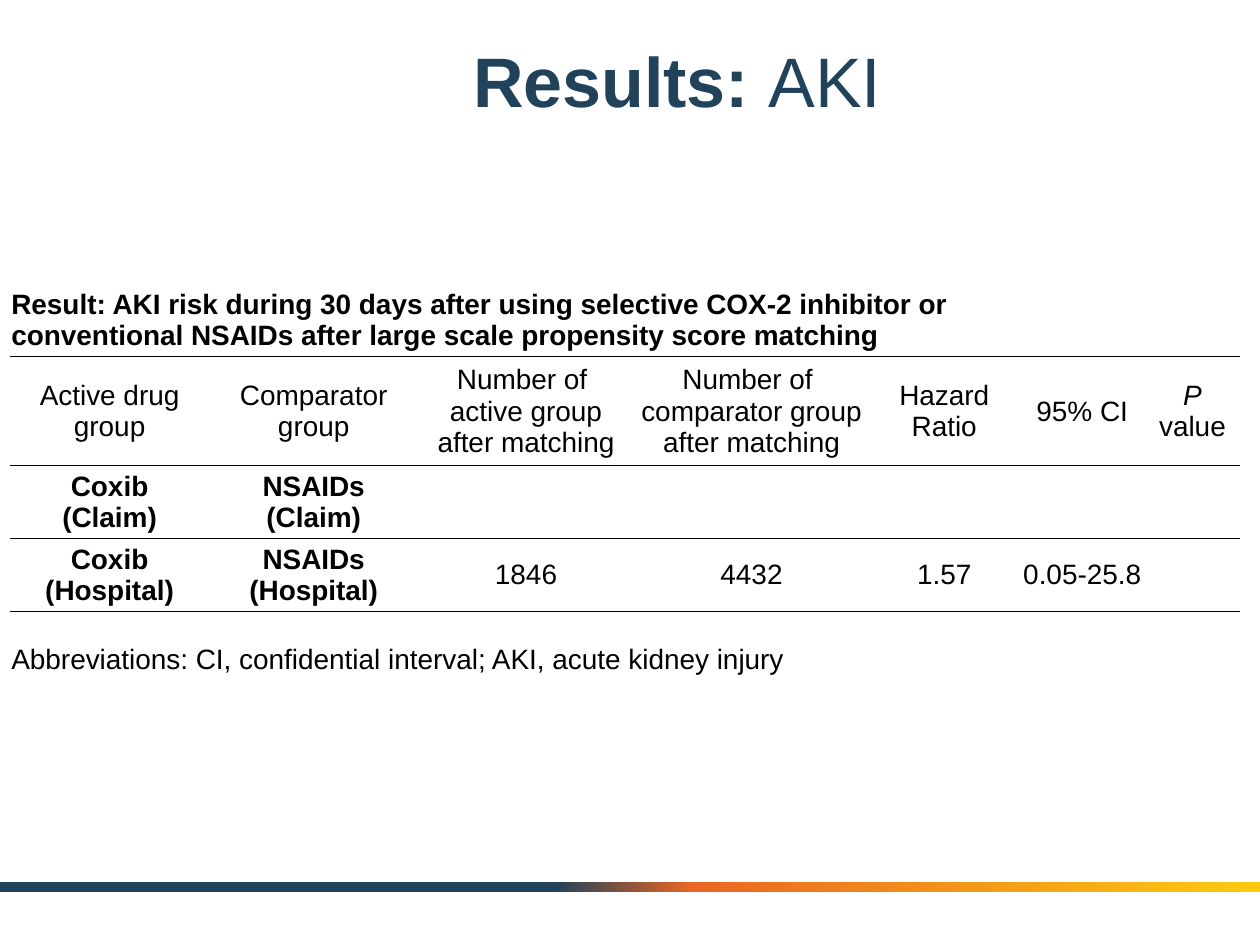
from copy import deepcopy

from lxml import etree
from pptx import Presentation
from pptx.dml.color import RGBColor
from pptx.enum.shapes import MSO_SHAPE
from pptx.enum.text import MSO_ANCHOR, PP_ALIGN
from pptx.oxml.ns import qn
from pptx.util import Inches, Pt

LEFT, CENTER = PP_ALIGN.LEFT, PP_ALIGN.CENTER
MIDDLE = MSO_ANCHOR.MIDDLE
RECTANGLE = MSO_SHAPE.RECTANGLE
NAVY, ORANGE, YELLOW, BLACK = "20425A", "EB6622", "FCCB10", "000000"


def color(value):
    return RGBColor.from_string(value)


def add_text(para, text, size=16, ink=BLACK, bold=False, italic=False, align=CENTER):
    para.alignment = align
    for index, line in enumerate(text.split("\n")):
        if index:
            para.add_line_break()
        span = para.add_run()
        span.text = line
        span.font.name = "Arial"
        span.font.size = Pt(size)
        span.font.bold = bold
        span.font.italic = italic
        span.font.color.rgb = color(ink)


deck = Presentation()
deck.slide_width, deck.slide_height = Inches(10), Inches(7.5)
page = deck.slides.add_slide(deck.slide_layouts[6])

# Gradient footer bar
bar = page.shapes.add_shape(RECTANGLE, 0, Inches(7), Inches(10), Inches(0.08))
bar.shadow.inherit = False
bar.line.fill.background()
bar.fill.gradient()
bar.fill.gradient_angle = 0
last_stop = bar.fill._fill._gradFill.find(qn("a:gsLst"))[-1]
last_stop.addnext(deepcopy(last_stop))
stops = [(0.44, NAVY), (0.55, ORANGE), (1, YELLOW)]
for stop, (position, tint) in zip(bar.fill.gradient_stops, stops):
    stop.position = position
    stop.color.rgb = color(tint)

# Results table
widths = [1.58, 1.66, 1.71, 1.87, 1.19, 1, 0.75]
heights = [0.58, 0.86, 0.58, 0.58, 0.76]
rows = [
    ["Result: AKI risk during 30 days after using selective COX-2 inhibitor or "
     "conventional NSAIDs after large scale propensity score matching"],
    ["Active drug group", "Comparator group",
     "Number of \nactive group\nafter matching",
     "Number of \ncomparator group after matching",
     "Hazard Ratio", "95% CI", "P value"],
    ["Coxib\n(Claim)", "NSAIDs\n(Claim)"],
    ["Coxib\n(Hospital)", "NSAIDs\n(Hospital)", "1846", "4432", "1.57", "0.05-25.8"],
    ["Abbreviations: CI, confidential interval; AKI, acute kidney injury"],
]
last_row = len(rows) - 1
table = page.shapes.add_table(
    len(rows), len(widths), Inches(0.08), Inches(2.25),
    Inches(sum(widths)), Inches(sum(heights))).table
table.first_row = table.horz_banding = False
for column, width in zip(table.columns, widths):
    column.width = Inches(width)
for row, height in zip(table.rows, heights):
    row.height = Inches(height)
table.cell(0, 0).merge(table.cell(0, 4))
table.cell(last_row, 0).merge(table.cell(last_row, 6))

for r, texts in enumerate(rows):
    for c in range(len(widths)):
        cell = table.cell(r, c)
        cell.fill.background()
        cell.vertical_anchor = MIDDLE
        cell.margin_left = cell.margin_right = cell.margin_top = Inches(0.01)
        cell.margin_bottom = 0

        # Thin rules between rows only
        ruled = {"lnL": False, "lnR": False, "lnT": r > 0, "lnB": r < last_row}
        properties = cell._tc.get_or_add_tcPr()
        for index, (edge, visible) in enumerate(ruled.items()):
            border = etree.Element(qn(f"a:{edge}"), w=str(Pt(0.5)))
            if visible:
                fill = etree.SubElement(border, qn("a:solidFill"))
                etree.SubElement(fill, qn("a:srgbClr"), val=BLACK)
            else:
                etree.SubElement(border, qn("a:noFill"))
            properties.insert(index, border)

        if c >= len(texts):
            continue
        para = cell.text_frame.paragraphs[0]
        if texts[c] == "P value":
            add_text(para, "P", italic=True)
            add_text(para, " value")
        else:
            add_text(para, texts[c],
                     bold=r == 0 or (r in (2, 3) and c < 2),
                     align=LEFT if r in (0, last_row) else CENTER)

# Title
title = page.shapes.add_textbox(Inches(1.25), Inches(0.17), Inches(8.25), Inches(0.92))
title.text_frame.word_wrap = True
title.text_frame.vertical_anchor = MIDDLE
para = title.text_frame.paragraphs[0]
add_text(para, "Results: ", size=40, ink=NAVY, bold=True)
add_text(para, "AKI", size=40, ink=NAVY)

deck.save("out.pptx")
